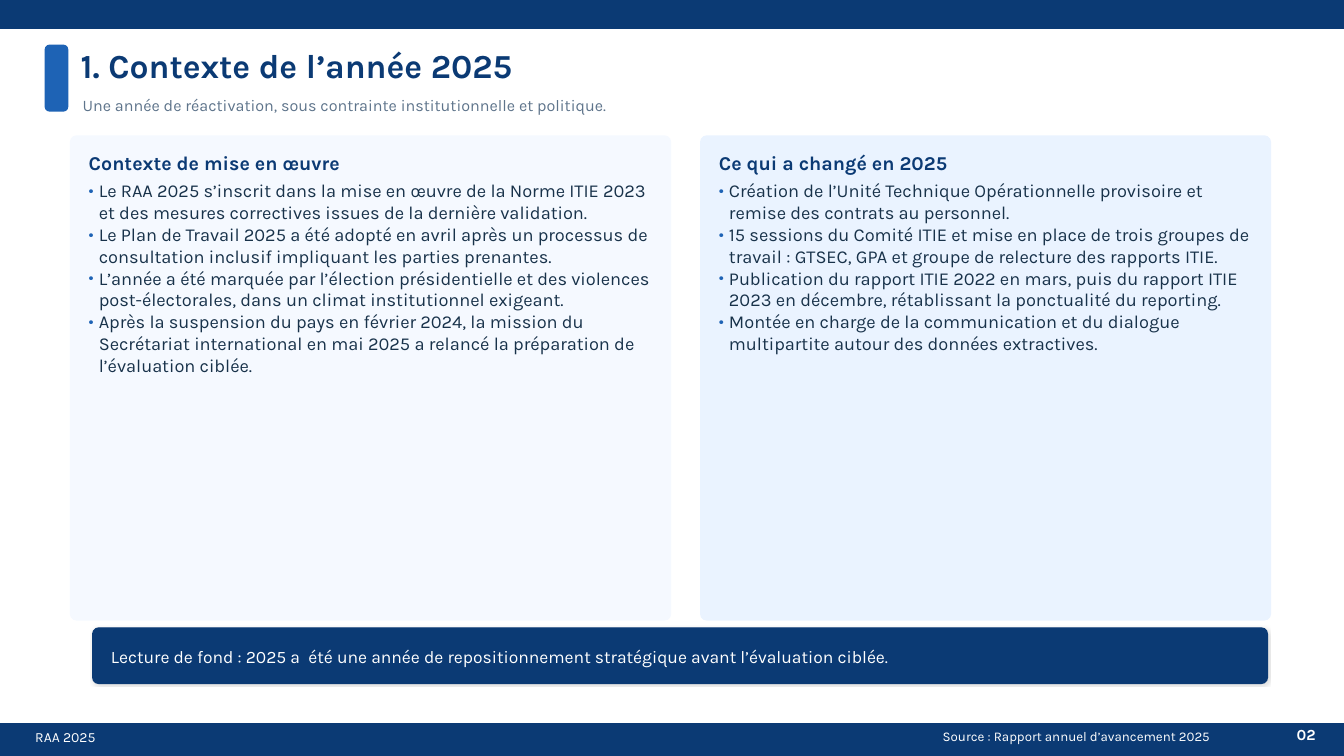
from collections import namedtuple
from dataclasses import dataclass

from lxml.etree import SubElement
from pptx import Presentation
from pptx.dml.color import RGBColor
from pptx.enum.shapes import MSO_SHAPE as Shape
from pptx.enum.text import MSO_ANCHOR as Anchor, MSO_AUTO_SIZE as AutoSize, PP_ALIGN as Align
from pptx.oxml.ns import qn
from pptx.util import Inches, Pt

Box = namedtuple("Box", "left top width height")


@dataclass(frozen=True)
class Theme:
    """Colours, font and type styles of the slide."""

    font: str = "Karla"
    navy: str = "0B3A74"
    blue: str = "1E63B5"
    ink: str = "18324A"
    slate: str = "5E748B"
    white: str = "FFFFFF"
    pale: str = "F5F9FF"
    sky: str = "EAF3FF"

    def style(self, name):
        """Return the size, weight and colour of a named text style."""
        size, bold, color = {
            "title": (24, True, self.navy),
            "subtitle": (11.5, False, self.slate),
            "heading": (14, True, self.navy),
            "body": (13, False, self.ink),
            "message": (12.5, False, self.white),
            "footer": (10, False, self.white),
            "source": (9.5, False, self.white),
            "number": (11, True, self.white),
        }[name]
        return {"name": self.font, "size": Pt(size), "bold": bold}, color


THEME = Theme()
BULLET_INDENT = Inches(0.1)

CONTEXT = [
    "Le RAA 2025 s’inscrit dans la mise en œuvre de la Norme ITIE 2023 et des mesures "
    "correctives issues de la dernière validation.",
    "Le Plan de Travail 2025 a été adopté en avril après un processus de consultation "
    "inclusif impliquant les parties prenantes.",
    "L’année a été marquée par l’élection présidentielle et des violences post-électorales, "
    "dans un climat institutionnel exigeant.",
    "Après la suspension du pays en février 2024, la mission du Secrétariat international "
    "en mai 2025 a relancé la préparation de l’évaluation ciblée.",
]
CHANGES = [
    "Création de l’Unité Technique Opérationnelle provisoire et remise des contrats au personnel.",
    "15 sessions du Comité ITIE et mise en place de trois groupes de travail : GTSEC, GPA "
    "et groupe de relecture des rapports ITIE.",
    "Publication du rapport ITIE 2022 en mars, puis du rapport ITIE 2023 en décembre, "
    "rétablissant la ponctualité du reporting.",
    "Montée en charge de la communication et du dialogue multipartite autour des données "
    "extractives.",
]


def place(shape, box):
    """Move a shape to a box given in inches."""
    for name, value in box._asdict().items():
        setattr(shape, name, Inches(value))


def add_panel(slide, box, color, radius=0):
    """Add a filled rectangle, rounded when a radius in inches is given."""
    kind = Shape.ROUNDED_RECTANGLE if radius else Shape.RECTANGLE
    shape = slide.shapes.add_shape(kind, *map(Inches, box))
    if radius:
        shape.adjustments[0] = radius / min(box.width, box.height)
    shape.shadow.inherit = False
    shape.fill.solid()
    shape.fill.fore_color.rgb = shape.line.color.rgb = RGBColor.from_string(color)
    shape.line.width = Pt(1)
    return shape


def add_bullet(paragraph):
    """Give a paragraph a blue hanging bullet."""
    properties = paragraph._p.get_or_add_pPr()
    properties.set("marL", str(BULLET_INDENT))
    properties.set("indent", str(-BULLET_INDENT))
    color = SubElement(properties, qn("a:buClr"))
    SubElement(color, qn("a:srgbClr"), val=THEME.blue)
    SubElement(properties, qn("a:buFont"), typeface=THEME.font)
    SubElement(properties, qn("a:buChar"), char="•")


def write(shape, lines, style, anchor=Anchor.MIDDLE, align=Align.LEFT, bullets=False):
    """Fill a shape with paragraphs in a named style, without margins."""
    frame = shape.text_frame
    frame_format = {
        "word_wrap": True, "auto_size": AutoSize.NONE, "vertical_anchor": anchor,
        "margin_left": 0, "margin_top": 0, "margin_right": 0, "margin_bottom": 0,
    }
    for name, value in frame_format.items():
        setattr(frame, name, value)
    font_format, color = THEME.style(style)
    for index, line in enumerate(lines):
        paragraph = frame.add_paragraph() if index else frame.paragraphs[0]
        paragraph.alignment = align
        paragraph.space_before = Pt(0)
        if bullets:
            add_bullet(paragraph)
        run = paragraph.add_run()
        run.text = line
        for name, value in font_format.items():
            setattr(run.font, name, value)
        run.font.color.rgb = RGBColor.from_string(color)


def add_text(slide, box, text, style, **options):
    """Add a one-paragraph text box."""
    write(slide.shapes.add_textbox(*map(Inches, box)), [text], style, **options)


def fill_placeholder(slide, index, box, lines, style, **options):
    """Bring a placeholder to the front, then place and fill it."""
    shape = slide.placeholders[index]
    slide.shapes._spTree.append(shape._element)
    place(shape, box)
    write(shape, lines, style, **options)


def add_header(slide, box, title, subtitle):
    """Place the accent mark, title and subtitle."""
    add_panel(slide, Box(box.left, box.top, 0.22, box.height), THEME.blue, 0.04)
    fill_placeholder(slide, 0, Box(box.left + 0.35, box.top - 0.03, 9.6, 0.45), [title], "title")
    add_text(slide, Box(box.left + 0.37, box.top + 0.45, 11.2, 0.28), subtitle, "subtitle")


def add_card(slide, box, index, color, heading, items):
    """Place a card with its heading and bulleted list."""
    add_panel(slide, box, color, 0.06)
    left, width = box.left + 0.18, box.width - 0.36
    add_text(slide, Box(left, box.top + 0.12, width, 0.28), heading, "heading")
    fill_placeholder(slide, index, Box(left, box.top + 0.43, width, box.height - 0.55),
                     items, "body", anchor=Anchor.TOP, bullets=True)


def add_message(slide, box, text):
    """Place the key message bar with its soft shadow."""
    bar = add_panel(slide, box, THEME.navy, 0.06)
    effects = bar._element.spPr.find(qn("a:effectLst"))
    shadow = SubElement(effects, qn("a:outerShdw"), blurRad=str(Pt(1.5)), dist=str(Pt(0.5)),
                        dir=str(45 * 60000), algn="bl", rotWithShape="0")
    color = SubElement(shadow, qn("a:srgbClr"), val="000000")
    SubElement(color, qn("a:alpha"), val="12000")
    add_text(slide, Box(box.left + 0.18, box.top + 0.18, box.width - 0.36, 0.25),
             text, "message", anchor=Anchor.TOP)


def add_footer(slide, box, label, source, number):
    """Place the footer band with its label, source and page number."""
    add_panel(slide, box, THEME.navy)
    add_text(slide, Box(box.left + 0.35, box.top + 0.04, 3.8, 0.18), label, "footer")
    add_text(slide, Box(box.left + 8.4, box.top + 0.04, 3.6, 0.16), source, "source",
             align=Align.RIGHT)
    add_text(slide, Box(box.left + 12.6, box.top, 0.45, 0.22), number, "number",
             align=Align.RIGHT)


def main():
    """Build and save the presentation."""
    presentation = Presentation()
    presentation.slide_width, presentation.slide_height = Inches(13.33), Inches(7.5)
    slide = presentation.slides.add_slide(presentation.slide_layouts.get_by_name("Two Content"))
    add_panel(slide, Box(0, 0, 13.33, 0.28), THEME.navy)
    add_footer(slide, Box(0, 7.18, 13.33, 0.32), "RAA 2025",
               "Source : Rapport annuel d’avancement 2025", "02")
    add_header(slide, Box(0.45, 0.45, 11.57, 0.65), "1. Contexte de l’année 2025",
               "Une année de réactivation, sous contrainte institutionnelle et politique.")
    add_card(slide, Box(0.7, 1.35, 5.95, 4.8), 1, THEME.pale,
             "Contexte de mise en œuvre", CONTEXT)
    add_card(slide, Box(6.95, 1.35, 5.65, 4.8), 2, THEME.sky,
             "Ce qui a changé en 2025", CHANGES)
    add_message(slide, Box(0.92, 6.23, 11.65, 0.55),
                "Lecture de fond : 2025 a  été une année de repositionnement stratégique "
                "avant l’évaluation ciblée.")
    presentation.save("out.pptx")


if __name__ == "__main__":
    main()
